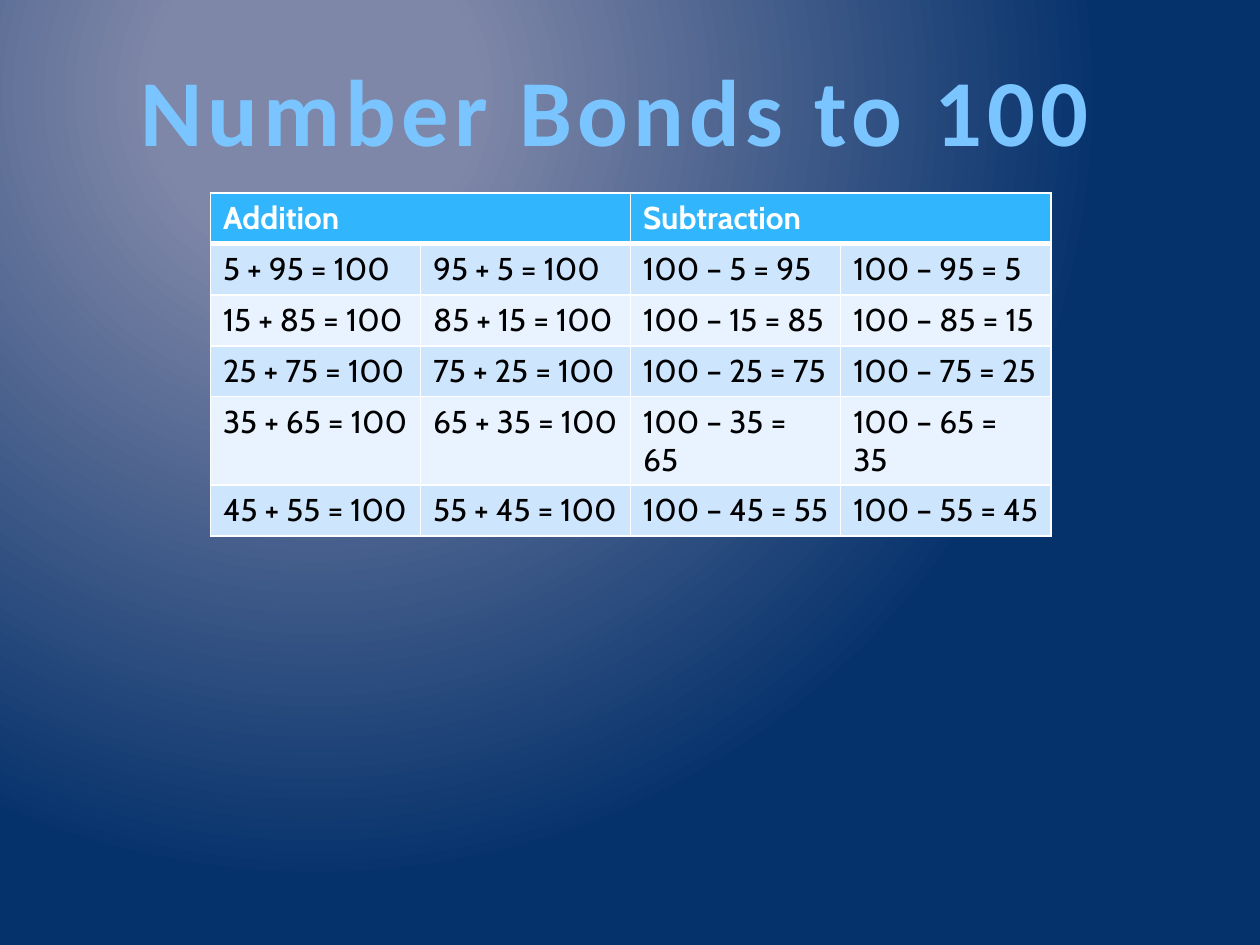
from lxml import etree
from pptx import Presentation
from pptx.dml.color import RGBColor
from pptx.enum import text
from pptx.oxml import parse_xml
from pptx.oxml.ns import qn
from pptx.util import Inches, Pt

NS = 'xmlns:a="http://schemas.openxmlformats.org/drawingml/2006/main"'


def rgb(code):
    return RGBColor.from_string(code)


def edge(cell, side, width):
    line = parse_xml(
        f'<a:{side} {NS} w="{Pt(width)}"><a:solidFill>'
        f'<a:srgbClr val="FFFFFF"/></a:solidFill></a:{side}>')
    cell._tc.get_or_add_tcPr().append(line)


deck = Presentation()
deck.slide_width, deck.slide_height = Inches(10), Inches(7.5)
slide = deck.slides.add_slide(deck.slide_layouts[5])

back = slide.background.fill
back.gradient()
for stop, (pos, code) in zip(back.gradient_stops, [(0.2, "7F87A8"), (1, "06326C")]):
    stop.position = pos
    stop.color.rgb = rgb(code)
grad = slide.background._cSld.find(".//" + qn("a:gradFill"))
grad.remove(grad.find(qn("a:lin")))
glow = etree.SubElement(grad, qn("a:path"), {"path": "circle"})
etree.SubElement(glow, qn("a:fillToRect"),
                 {"l": "50000", "t": "20000", "r": "100000", "b": "100000"})

title = slide.shapes.title
title.left, title.top = Inches(0.35), Inches(0.36)
title.width, title.height = Inches(9.06), Inches(1.01)
frame = title.text_frame
frame.text = "Number Bonds to 100"
frame.word_wrap = True
frame.auto_size = text.MSO_AUTO_SIZE.SHAPE_TO_FIT_TEXT
frame.vertical_anchor = text.MSO_ANCHOR.MIDDLE
frame.paragraphs[0].alignment = text.PP_ALIGN.CENTER
font = frame.paragraphs[0].runs[0].font
font.name, font.size, font.bold = "Calibri", Pt(54), True
font.fill.gradient()
font.fill.gradient_angle = 270
for stop, (pos, code) in zip(font.fill.gradient_stops, [(0.1, "7AC5FF"), (0.75, "0092DF")]):
    stop.position = pos
    stop.color.rgb = rgb(code)
props = frame.paragraphs[0].runs[0]._r.rPr
props.set("spc", "300")
props.insert(0, parse_xml(
    f'<a:ln {NS} w="{Pt(0.9)}"><a:solidFill><a:srgbClr val="073E87"/></a:solidFill></a:ln>'))
props.find(qn("a:gradFill")).addnext(parse_xml(
    f'<a:effectLst {NS}><a:outerShdw blurRad="38100" dist="25400" dir="2700000">'
    '<a:srgbClr val="000000"><a:alpha val="40000"/></a:srgbClr></a:outerShdw></a:effectLst>'))

rows = [["Addition", "", "Subtraction", ""]]
for low in range(5, 50, 10):
    high = 100 - low
    rows.append([f"{low} + {high} = 100", f"{high} + {low} = 100",
                 f"100 – {low} = {high}", f"100 – {high} = {low}"])

table = slide.shapes.add_table(len(rows), 4, Inches(1.67), Inches(1.53),
                               Inches(6.67), Inches(2.43)).table
for left in (0, 2):
    table.cell(0, left).merge(table.cell(0, left + 1))
for r, row in enumerate(rows):
    for c, words in enumerate(row):
        cell = table.cell(r, c)
        for side in ("lnL", "lnR", "lnT", "lnB"):
            thick = (r, side) in ((0, "lnB"), (1, "lnT"))
            edge(cell, side, 3 if thick else 1)
        cell.fill.solid()
        cell.fill.fore_color.rgb = rgb(
            "31B6FD" if r == 0 else "CEE5FE" if r % 2 else "E8F3FF")
        if words:
            cell.text_frame.text = words
            font = cell.text_frame.paragraphs[0].runs[0].font
            font.name, font.size, font.bold = "Cabin", Pt(18), r == 0
            font.color.rgb = rgb("000000" if r else "FFFFFF")

deck.save("out.pptx")
